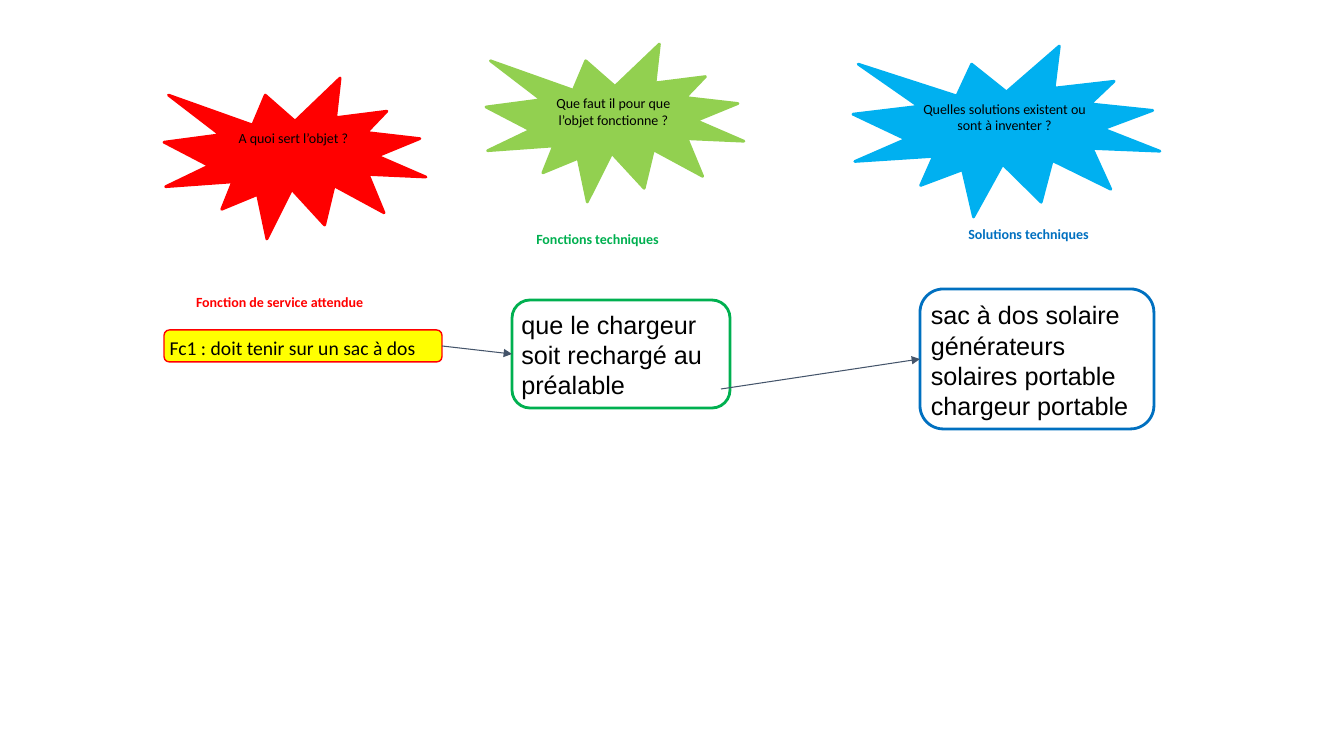
from lxml import etree
from pptx import Presentation
from pptx.dml.color import RGBColor
from pptx.enum.shapes import MSO_CONNECTOR as Link, MSO_SHAPE as Preset
from pptx.enum.text import MSO_ANCHOR as Anchor, PP_ALIGN as Align
from pptx.oxml.ns import qn
from pptx.util import Pt

EMU_PER_PX = 914400 / 100.8
INSET = 4
COLORS = {
    "red": "FF0000", "lime": "92D050", "sky": "00B0F0",
    "green": "00B050", "blue": "0070C0", "yellow": "FFFF00",
    "black": "000000", "slate": "44546A",
}


def px(length):
    return round(length * EMU_PER_PX)


def rgb(name):
    return RGBColor.from_string(COLORS[name])


def write(shape, text, size, font, color="black", bold=False, align=Align.LEFT):
    frame = shape.text_frame
    frame.text = text
    frame.word_wrap = True
    frame.vertical_anchor = Anchor.TOP
    frame.margin_left = frame.margin_right = px(INSET)
    frame.margin_top = frame.margin_bottom = px(INSET)
    for paragraph in frame.paragraphs:
        paragraph.alignment = align
        for run in paragraph.runs:
            run.font.size = Pt(size)
            run.font.name = font
            run.font.bold = bold
            run.font.color.rgb = rgb(color)


def add_preset(slide, preset, area, fill, outline, weight):
    shape = slide.shapes.add_shape(preset, *map(px, area))
    shape.shadow.inherit = False
    if fill:
        shape.fill.solid()
        shape.fill.fore_color.rgb = rgb(fill)
    else:
        shape.fill.background()
    shape.line.color.rgb = rgb(outline)
    shape.line.width = Pt(weight)
    return shape


def add_question(slide, area, text, color):
    burst = add_preset(slide, Preset.EXPLOSION1, area, color, color, 2)
    write(burst, text, 10, "Calibri", align=Align.CENTER)


def add_heading(slide, left, top, text, color):
    heading = slide.shapes.add_textbox(px(left), px(top), px(223), px(34))
    write(heading, text, 10, "Calibri", color, True, Align.CENTER)


def add_answer(slide, area, text, outline, fill=None, weight=2, size=18, font="Arial"):
    answer = add_preset(slide, Preset.ROUNDED_RECTANGLE, area, fill, outline, weight)
    write(answer, text, size, font)
    return answer


def add_arrow(slide, start, end, target, source=None):
    arrow = slide.shapes.add_connector(Link.STRAIGHT, *map(px, start + end))
    if source:
        arrow.begin_connect(source, 3)
    arrow.end_connect(target, 1)
    arrow.line.color.rgb = rgb("slate")
    arrow.line.width = Pt(0.75)
    etree.SubElement(arrow.line._get_or_add_ln(), qn("a:tailEnd"), type="triangle")
    etree.SubElement(arrow._element.spPr, qn("a:effectLst"))


def main():
    deck = Presentation()
    deck.slide_width, deck.slide_height = px(1344), px(756)
    slide = deck.slides.add_slide(deck.slide_layouts[6])

    # Column headings
    add_heading(slide, 168, 289, "Fonction de service attendue", "red")
    add_heading(slide, 486, 226, "Fonctions techniques", "green")
    add_heading(slide, 917, 221, "Solutions techniques", "blue")

    # Answers under each heading
    service = add_answer(slide, (164, 330, 278, 32), "Fc1 : doit tenir sur un sac à dos",
                         "red", "yellow", 1, 14, "Calibri")
    function = add_answer(slide, (512, 300, 218, 108),
                          "que le chargeur soit rechargé au préalable", "green")
    solutions = add_answer(
        slide, (920, 289, 234, 140),
        "sac à dos solaire\ngénérateurs solaires portable\nchargeur portable", "blue")

    # Question bursts
    add_question(slide, (164, 78, 262, 161), "A quoi sert l’objet ?", "red")
    add_question(slide, (486, 44, 258, 158),
                 "Que faut il pour que l’objet fonctionne ?", "lime")
    add_question(slide, (853, 46, 307, 171),
                 "Quelles solutions existent ou sont à inventer ?", "sky")

    # Arrows from service to function to solutions
    add_arrow(slide, (442, 346), (512, 354), function, service)
    add_arrow(slide, (721, 389), (920, 359), solutions)

    deck.save("out.pptx")


if __name__ == "__main__":
    main()
